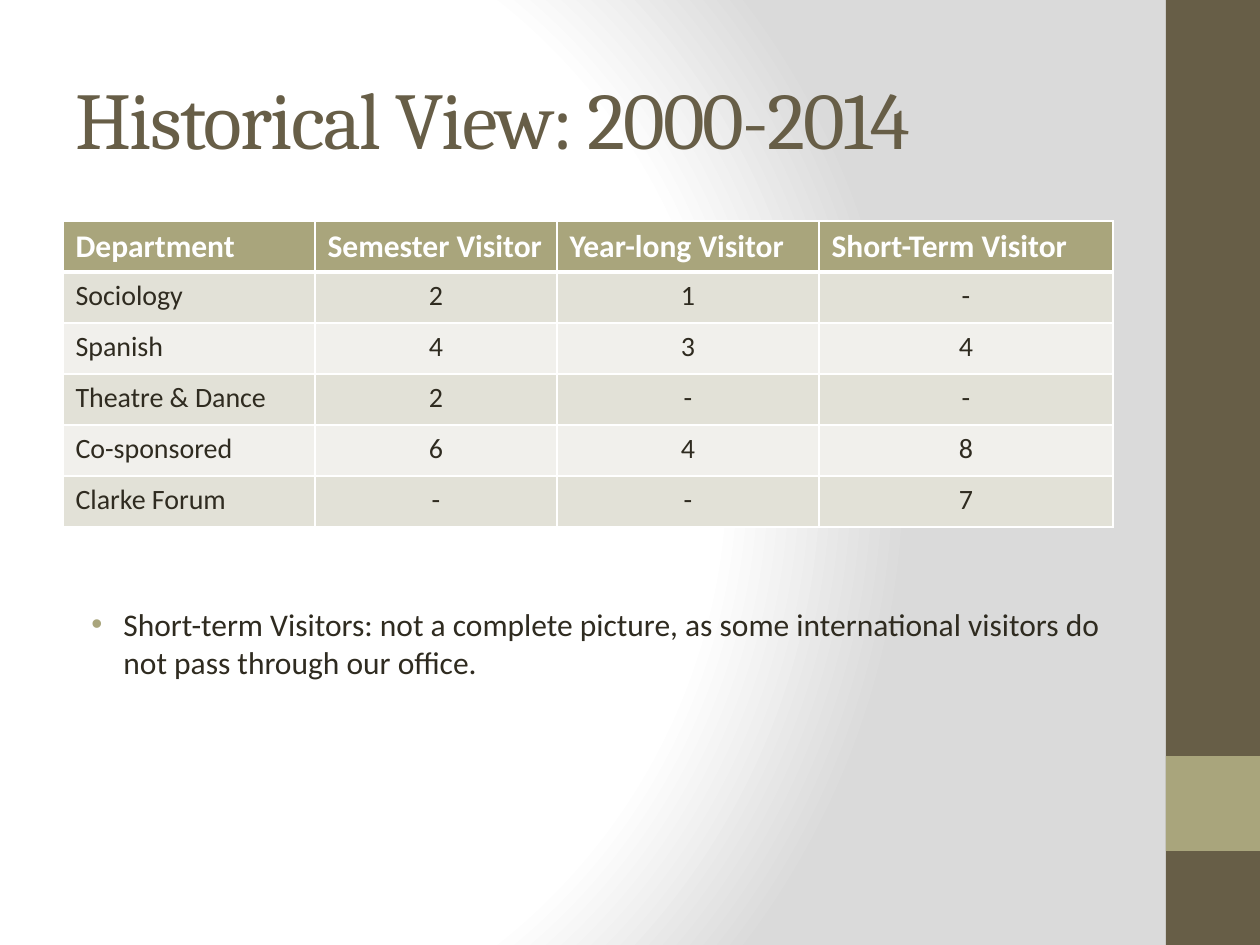
from lxml.etree import SubElement
from pptx import Presentation
from pptx.dml.color import RGBColor
from pptx.enum.shapes import MSO_SHAPE
from pptx.enum.text import MSO_ANCHOR, MSO_AUTO_SIZE, PP_ALIGN
from pptx.oxml import parse_xml
from pptx.oxml.ns import nsdecls, qn
from pptx.util import Emu, Pt

SCALE = 914400 / 126
C = {"brown": "675E47", "olive": "A9A57C", "ink": "2F2B20", "white": "FFFFFF",
     "gray": "DADADA", "band1": "E2E1D7", "band2": "F1F0EC"}


def px(n):
    return Emu(round(n * SCALE))


def add_run(p, text, size, color, font="Calibri", bold=False):
    r = p.add_run()
    r.text = text
    r.font.size, r.font.name, r.font.bold = Pt(size), font, bold
    r.font.color.rgb = RGBColor.from_string(C[color])
    return r


prs = Presentation()
prs.slide_width, prs.slide_height = px(1260), px(945)
s = prs.slides.add_slide(prs.slide_layouts[5])

# Background: radial gradient, white to gray
s.background.fill.solid()
bg = s.background.fill._xPr
stops = "".join(f'<a:gs pos="{pos}000"><a:srgbClr val="{C[c]}"/></a:gs>'
                for pos, c in ((0, "white"), (75, "white"), (100, "gray")))
bg.replace(bg.find(qn("a:solidFill")), parse_xml(
    f'<a:gradFill {nsdecls("a")} rotWithShape="1"><a:gsLst>{stops}</a:gsLst>'
    '<a:path path="circle"><a:fillToRect l="20000" t="50000" r="100000" b="50000"/>'
    '</a:path></a:gradFill>'))

# Side bar and its accent
for top, height, color in ((0, 945, "brown"), (756, 95, "olive")):
    bar = s.shapes.add_shape(MSO_SHAPE.RECTANGLE, px(1166), px(top), px(94), px(height))
    bar.shadow.inherit = False
    bar.fill.solid()
    bar.fill.fore_color.rgb = RGBColor.from_string(C[color])
    bar.line.fill.background()

# Title
title = s.shapes.title
title.left, title.top, title.width, title.height = px(63), px(38), px(1050), px(158)
tf = title.text_frame
tf.auto_size = MSO_AUTO_SIZE.NONE
tf.vertical_anchor = MSO_ANCHOR.MIDDLE
p = tf.paragraphs[0]
p.alignment = PP_ALIGN.LEFT
r = add_run(p, "Historical View: 2000-2014", 46, "brown", "Cambria")
r.font._element.set("spc", "-100")

# Visitor table
rows = [
    ("Department", "Semester Visitor", "Year-long Visitor", "Short-Term Visitor"),
    ("Sociology", "2", "1", "-"),
    ("Spanish", "4", "3", "4"),
    ("Theatre & Dance", "2", "-", "-"),
    ("Co-sponsored", "6", "4", "8"),
    ("Clarke Forum", "-", "-", "7"),
]
table = s.shapes.add_table(len(rows), 4, px(63), px(221), px(1050), px(306)).table
for col, width in zip(table.columns, (252, 242, 262, 294)):
    col.width = px(width)
for i, row in enumerate(rows):
    table.rows[i].height = px(51)
    fill = "olive" if i == 0 else "band1" if i % 2 else "band2"
    for j, text in enumerate(row):
        cell = table.cell(i, j)
        p = cell.text_frame.paragraphs[0]
        if i == 0:
            add_run(p, text, 18, "white", bold=True)
        else:
            p.alignment = PP_ALIGN.CENTER if j else PP_ALIGN.LEFT
            add_run(p, text, 16, "ink")
        # White borders, thicker below the header
        tcPr = cell._tc.get_or_add_tcPr()
        for side in "LRTB":
            thick = (i, side) in ((0, "B"), (1, "T"))
            ln = SubElement(tcPr, qn(f"a:ln{side}"), w=str(Pt(3 if thick else 1)))
            SubElement(SubElement(ln, qn("a:solidFill")), qn("a:srgbClr"), val=C["white"])
        cell.fill.solid()
        cell.fill.fore_color.rgb = RGBColor.from_string(C[fill])

# Bulleted note
tf = s.shapes.add_textbox(px(63), px(599), px(1050), px(305)).text_frame
tf.word_wrap = True
p = tf.paragraphs[0]
p.space_before = Pt(4)
pPr = p._p.get_or_add_pPr()
pPr.set("marL", str(px(48)))
pPr.set("indent", str(px(-32)))
SubElement(SubElement(pPr, qn("a:buClr")), qn("a:srgbClr"), val=C["olive"])
SubElement(pPr, qn("a:buFont"), typeface="Arial")
SubElement(pPr, qn("a:buChar"), char="•")
add_run(p, "Short-term Visitors: not a complete picture, as some international "
           "visitors do not pass through our office.", 18, "ink")

prs.save("out.pptx")
